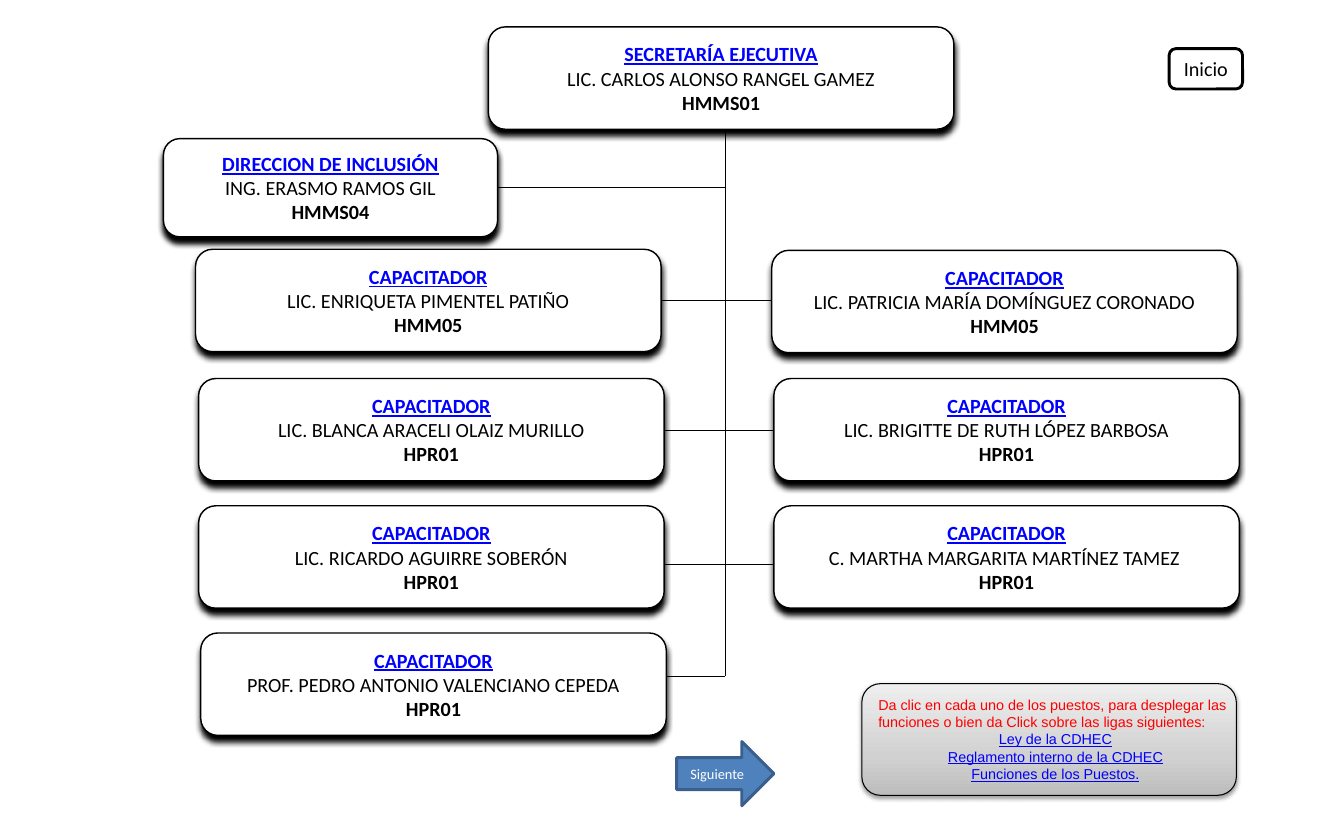
from lxml.etree import SubElement
from copy import deepcopy
from pptx import Presentation
from pptx.dml.color import RGBColor
from pptx.enum.shapes import MSO_CONNECTOR as Connector, MSO_SHAPE as Shape
from pptx.enum.text import MSO_ANCHOR as Anchor, MSO_AUTO_SIZE as AutoSize, PP_ALIGN as Align
from pptx.oxml.ns import qn
from pptx.util import Pt

EMU_PER_PX = 9144
WIDTH, HEIGHT = 1299, 788

BLACK = RGBColor(0x00, 0x00, 0x00)
WHITE = RGBColor(0xFF, 0xFF, 0xFF)
LINK_BLUE = RGBColor(0x00, 0x00, 0xFF)
RED = RGBColor(0xFF, 0x00, 0x00)
ARROW_FILL = RGBColor(0x4F, 0x81, 0xBD)
ARROW_LINE = RGBColor(0x3A, 0x5F, 0x8C)
PANEL_STOPS = [
    (0, RGBColor(0xBD, 0xBD, 0xBD)),
    (0.35, RGBColor(0xD1, 0xD1, 0xD1)),
    (1, RGBColor(0xEE, 0xEE, 0xEE)),
]

SPINE_X, SPINE_TOP, SPINE_BOTTOM = 701, 117, 654
BRANCHES = [(479, SPINE_X, 181), (578, 799, 291), (594, 816, 416),
            (610, 799, 546), (512, SPINE_X, SPINE_BOTTOM)]

CARD_WIDTH, CARD_HEIGHT = 450, 99
TRAINER = "CAPACITADOR"
CARDS = [
    (472, 26, CARD_WIDTH, CARD_HEIGHT,
     "SECRETARÍA EJECUTIVA", "LIC. CARLOS ALONSO RANGEL GAMEZ", "HMMS01"),
    (158, 134, 323, 95,
     "DIRECCION DE INCLUSIÓN", "ING. ERASMO RAMOS GIL", "HMMS04"),
]
TRAINERS = [
    (189, 241, "LIC. ENRIQUETA PIMENTEL PATIÑO", "HMM05"),
    (746, 242, "LIC. PATRICIA MARÍA DOMÍNGUEZ CORONADO", "HMM05"),
    (192, 366, "LIC. BLANCA ARACELI OLAIZ MURILLO", "HPR01"),
    (748, 366, "LIC. BRIGITTE DE RUTH LÓPEZ BARBOSA", "HPR01"),
    (192, 489, "LIC. RICARDO AGUIRRE SOBERÓN", "HPR01"),
    (748, 489, "C. MARTHA MARGARITA MARTÍNEZ TAMEZ ", "HPR01"),
    (194, 612, "PROF. PEDRO ANTONIO VALENCIANO CEPEDA", "HPR01"),
]
CARDS += [(left, top, CARD_WIDTH, CARD_HEIGHT, TRAINER, name, code)
          for left, top, name, code in TRAINERS]

INSTRUCTIONS = ("Da clic en cada uno de los puestos, para desplegar las funciones "
                "o bien da Click sobre las ligas siguientes:")
LINKS = ["Ley de la CDHEC", "Reglamento interno de la CDHEC", "Funciones de los Puestos."]


def px(*lengths):
    """Turn pixel lengths into EMU."""
    return [length * EMU_PER_PX for length in lengths]


def write(frame, text, size=14, font="Calibri", color=BLACK, bold=False,
          underline=False, align=Align.CENTER):
    """Fill the frame's first paragraph, or add one when it is taken."""
    paragraph = frame.paragraphs[-1]
    if paragraph.runs:
        paragraph = frame.add_paragraph()
    paragraph.alignment = align
    run = paragraph.add_run()
    run.text = text
    run.font.size = Pt(size)
    run.font.name = font
    run.font.color.rgb = color
    run.font.bold = bold
    run.font.underline = underline


class OrgChart:
    def __init__(self, slide):
        self.slide = slide
        self.line_width = 0.75

    def line(self, x1, y1, x2, y2):
        connector = self.slide.shapes.add_connector(Connector.STRAIGHT, *px(x1, y1, x2, y2))
        connector.line.color.rgb = BLACK
        connector.line.width = Pt(self.line_width)
        SubElement(connector._element.spPr, qn("a:effectLst"))

    def shape(self, kind, left, top, width, height, fill=WHITE, line=BLACK, line_width=1):
        shape = self.slide.shapes.add_shape(kind, *px(left, top, width, height))
        shape.fill.solid()
        shape.fill.fore_color.rgb = fill
        shape.line.color.rgb = line
        shape.line.width = Pt(line_width)
        shape.shadow.inherit = False
        shape.text_frame.vertical_anchor = Anchor.MIDDLE
        return shape

    def drop_shadow(self, shape, blur, distance, opacity):
        effects = shape._element.spPr.find(qn("a:effectLst"))
        shadow = SubElement(effects, qn("a:outerShdw"), blurRad=str(Pt(blur)),
                            dist=str(Pt(distance)), dir="5400000", rotWithShape="0")
        color = SubElement(shadow, qn("a:srgbClr"), val=str(BLACK))
        SubElement(color, qn("a:alpha"), val=str(opacity * 1000))

    def card(self, left, top, width, height, post, name, code):
        card = self.shape(Shape.ROUNDED_RECTANGLE, left, top, width, height)
        self.drop_shadow(card, 4, 4, 100)
        frame = card.text_frame
        frame.word_wrap = False
        frame.margin_left, frame.margin_right, frame.margin_top, frame.margin_bottom = px(17, 17, 9, 9)
        write(frame, post, color=LINK_BLUE, bold=True, underline=True)
        write(frame, name)
        write(frame, code, bold=True)

    def button(self, kind, left, top, width, height, text, size, color, **style):
        button = self.shape(kind, left, top, width, height, line_width=2, **style)
        write(button.text_frame, text, size=size, color=color)

    def gradient_panel(self, left, top, width, height):
        panel = self.shape(Shape.ROUNDED_RECTANGLE, left, top, width, height,
                           line_width=self.line_width)
        self.drop_shadow(panel, 3.1, 1.6, 38)
        panel.fill.gradient()
        panel.fill.gradient_angle = 90
        stop_list = next(panel._element.spPr.iter(qn("a:gsLst")))
        stop_list.append(deepcopy(stop_list[0]))
        for stop, (position, color) in zip(panel.fill.gradient_stops, PANEL_STOPS):
            stop.position = position
            stop.color.rgb = color

    def instructions(self, left, top, width, height):
        frame = self.slide.shapes.add_textbox(*px(left, top, width, height)).text_frame
        frame.word_wrap = True
        frame.auto_size = AutoSize.SHAPE_TO_FIT_TEXT
        write(frame, INSTRUCTIONS, size=10, font="Arial", color=RED, align=Align.LEFT)
        for link in LINKS:
            write(frame, link, size=10, font="Arial", color=LINK_BLUE, underline=True)


def main():
    presentation = Presentation()
    presentation.slide_width, presentation.slide_height = px(WIDTH, HEIGHT)
    chart = OrgChart(presentation.slides.add_slide(presentation.slide_layouts[6]))

    chart.line(SPINE_X, SPINE_TOP, SPINE_X, SPINE_BOTTOM)
    for start, end, y in BRANCHES:
        chart.line(start, y, end, y)
    for card in CARDS:
        chart.card(*card)
    chart.button(Shape.ROUNDED_RECTANGLE, 1130, 47, 71, 39, "Inicio", 14, BLACK)
    chart.gradient_panel(833, 661, 362, 108)
    chart.instructions(839, 668, 362, 94)
    chart.button(Shape.RIGHT_ARROW, 654, 717, 94, 62, "Siguiente", 10, WHITE,
                 fill=ARROW_FILL, line=ARROW_LINE)
    presentation.save("out.pptx")


if __name__ == "__main__":
    main()
